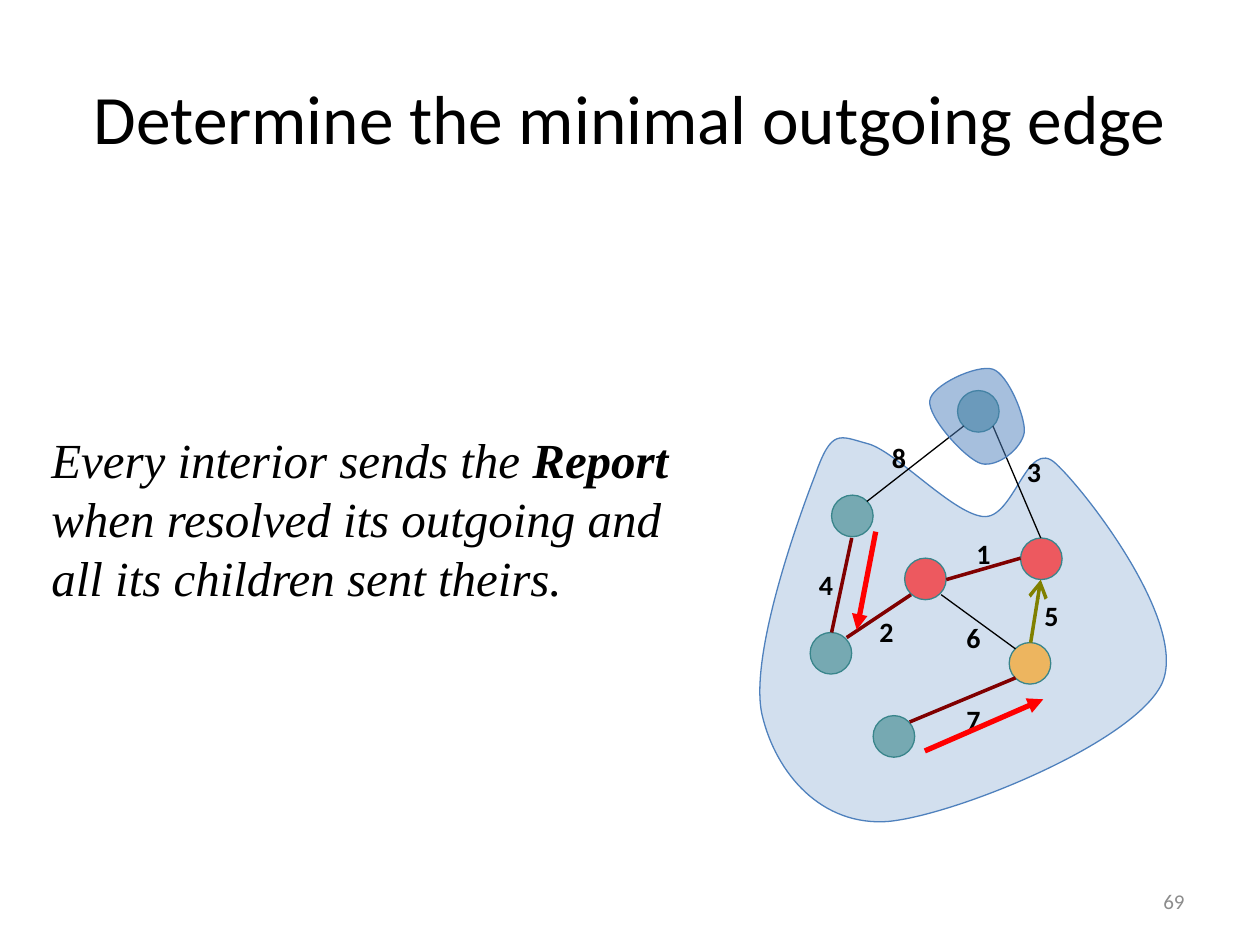
"""Build the slide on finding the minimal outgoing edge."""
from lxml import etree
from pptx import Presentation, util as u
from pptx.dml.color import RGBColor
from pptx.enum import shapes, text
from pptx.oxml.ns import qn

HUES = {
    "black": "000000", "blue": "4F81BD", "teal": "39858B", "red": "FF0000",
    "gold": "FF9900", "wine": "800000", "olive": "808000", "gray": "8C8C8C",
}
SIZE = 0.33


def cm(inch):
    return u.Cm(inch * 2.54)


def paint(shape, hue, rim, alpha):
    shape.shadow.inherit = False
    shape.fill.solid()
    shape.fill.fore_color.rgb = RGBColor.from_string(HUES[hue])
    shape.line.color.rgb = RGBColor.from_string(HUES[rim])
    shape.line.width = u.Pt(0.75)
    tint = shape._element.spPr.find(qn("a:solidFill"))[0]
    etree.SubElement(tint, qn("a:alpha"), val=str(alpha * 1000))


deck = Presentation()
deck.slide_width, deck.slide_height = cm(10), cm(7.5)
slide = deck.slides.add_slide(deck.slide_layouts[5])
parts = slide.shapes

title = parts.title
title.left, title.top, title.width, title.height = cm(0.5), cm(0.3), cm(9), cm(1.25)
title.text_frame.vertical_anchor = text.MSO_ANCHOR.MIDDLE
para = title.text_frame.paragraphs[0]
para.alignment = text.PP_ALIGN.CENTER
run = para.add_run()
run.text = "Determine the minimal outgoing edge"
run.font.name, run.font.size = "Calibri", u.Pt(39.6)
run.font.color.rgb = RGBColor.from_string(HUES["black"])

body = parts.add_textbox(cm(0.31), cm(3.36), cm(5.33), cm(1.5)).text_frame
body.word_wrap = True
body.auto_size = text.MSO_AUTO_SIZE.SHAPE_TO_FIT_TEXT
para = body.paragraphs[0]
for words, bold in [
    ("Every interior sends the ", False),
    ("Report", True),
    (" when resolved its outgoing and all its children sent theirs.", False),
]:
    run = para.add_run()
    run.text = words
    run.font.name, run.font.size = "Times New Roman", u.Pt(28)
    run.font.bold, run.font.italic = bold, True
    run.font.color.rgb = RGBColor.from_string(HUES["black"])

blobs = []
for alpha, dots in [
    (25, [
        (6.47, 3.77),
        (6.6, 3.4), (6.66, 3.46), (6.88, 3.52),
        (7.1, 3.57), (7.55, 4.07), (7.8, 4.1),
        (8.05, 4.13), (8.15, 3.46), (8.38, 3.68),
        (8.62, 3.9), (9.44, 4.96), (9.22, 5.43),
        (8.99, 5.9), (7.58, 6.47), (7.05, 6.52),
        (6.52, 6.56), (6.16, 6.14), (6.05, 5.68),
        (5.94, 5.22), (6.33, 4.13), (6.47, 3.77),
    ]),
    (50, [
        (7.38, 3.18),
        (7.39, 3.06), (7.75, 2.89), (7.88, 2.93),
        (8, 2.97), (8.14, 3.31), (8.13, 3.43),
        (8.11, 3.56), (7.92, 3.71), (7.79, 3.68),
        (7.67, 3.65), (7.36, 3.31), (7.38, 3.18),
    ]),
]:
    start, *rest = [(cm(x), cm(y)) for x, y in dots]
    pen = parts.build_freeform(*start)
    pen.add_line_segments(rest, close=True)
    blob = pen.convert_to_shape()
    lines = list(blob._element.iter(qn("a:lnTo")))
    for first in range(0, len(lines), 3):
        curve = etree.Element(qn("a:cubicBezTo"))
        lines[first].addprevious(curve)
        for line in lines[first:first + 3]:
            curve.append(line[0])
            line.getparent().remove(line)
    paint(blob, "blue", "blue", alpha)
    blobs.append(blob)

for x, y, hue in [
    (7.18, 4.43, "red"), (7.6, 3.1, "teal"), (8.01, 5.1, "gold"), (8.1, 4.27, "red"),
    (6.93, 5.68, "teal"), (6.6, 3.93, "teal"), (6.43, 5.02, "teal"),
]:
    node = parts.add_shape(shapes.MSO_SHAPE.OVAL, cm(x), cm(y), cm(SIZE), cm(SIZE))
    paint(node, hue, "teal", 60)

edges = []
for ends, hue, width, head, scale in [
    ((6.88, 3.98, 7.65, 3.38), "black", 0.75, None, None),
    ((7.51, 4.6, 8.1, 4.43), "wine", 2, None, None),
    ((8.26, 4.27, 7.88, 3.38), "black", 0.75, None, None),
    ((7.23, 4.72, 6.72, 5.06), "wine", 2, None, None),
    ((7.47, 4.72, 8.06, 5.15), "black", 0.75, None, None),
    ((8.18, 5.1, 8.26, 4.6), "olive", 2, "arrow", "lg"),
    ((8.06, 5.38, 7.22, 5.73), "wine", 2, None, None),
    ((6.6, 5.02, 6.76, 4.27), "wine", 2, None, None),
    ((6.95, 4.22, 6.8, 5), "red", 3, "triangle", "med"),
    ((7.34, 5.96, 8.28, 5.55), "red", 3, "triangle", "med"),
]:
    edge = parts.add_connector(shapes.MSO_CONNECTOR.STRAIGHT, *map(cm, ends))
    edge.line.color.rgb = RGBColor.from_string(HUES[hue])
    edge.line.width = u.Pt(width)
    props = edge._element.spPr
    if head:
        etree.SubElement(props.find(qn("a:ln")), qn("a:tailEnd"),
                         type=head, w=scale, len=scale)
    etree.SubElement(props, qn("a:effectLst"))
    edges.append(edge)

marks = [
    ("4", 6.43, 4.43), ("3", 8.08, 3.53), ("1", 7.68, 4.18), ("7", 7.6, 5.5),
    ("2", 6.91, 4.8), ("5", 8.22, 4.67), ("6", 7.6, 4.85), ("8", 7.01, 3.42),
]
labels = [(word, x, y, 0.25, 0.42, "CENTER", 16, "black") for word, x, y in marks]
labels.append(("69", 7.17, 6.95, 2.33, 0.4, "RIGHT", 12, "gray"))
tags = []
for word, x, y, width, height, side, size, hue in labels:
    tag = parts.add_textbox(cm(x), cm(y), cm(width), cm(height))
    frame = tag.text_frame
    frame.word_wrap = side == "RIGHT"
    if side == "CENTER":
        frame.margin_left = frame.margin_right = 0
    frame.vertical_anchor = text.MSO_ANCHOR.MIDDLE
    para = frame.paragraphs[0]
    para.alignment = text.PP_ALIGN[side]
    run = para.add_run()
    run.text = word
    run.font.name, run.font.size = "Calibri", u.Pt(size)
    run.font.bold = side == "CENTER"
    run.font.color.rgb = RGBColor.from_string(HUES[hue])
    tags.append(tag)

for part in [blobs[1], tags[-2], *edges[-2:], tags[-1]]:
    parts._spTree.append(part._element)

deck.save("out.pptx")
